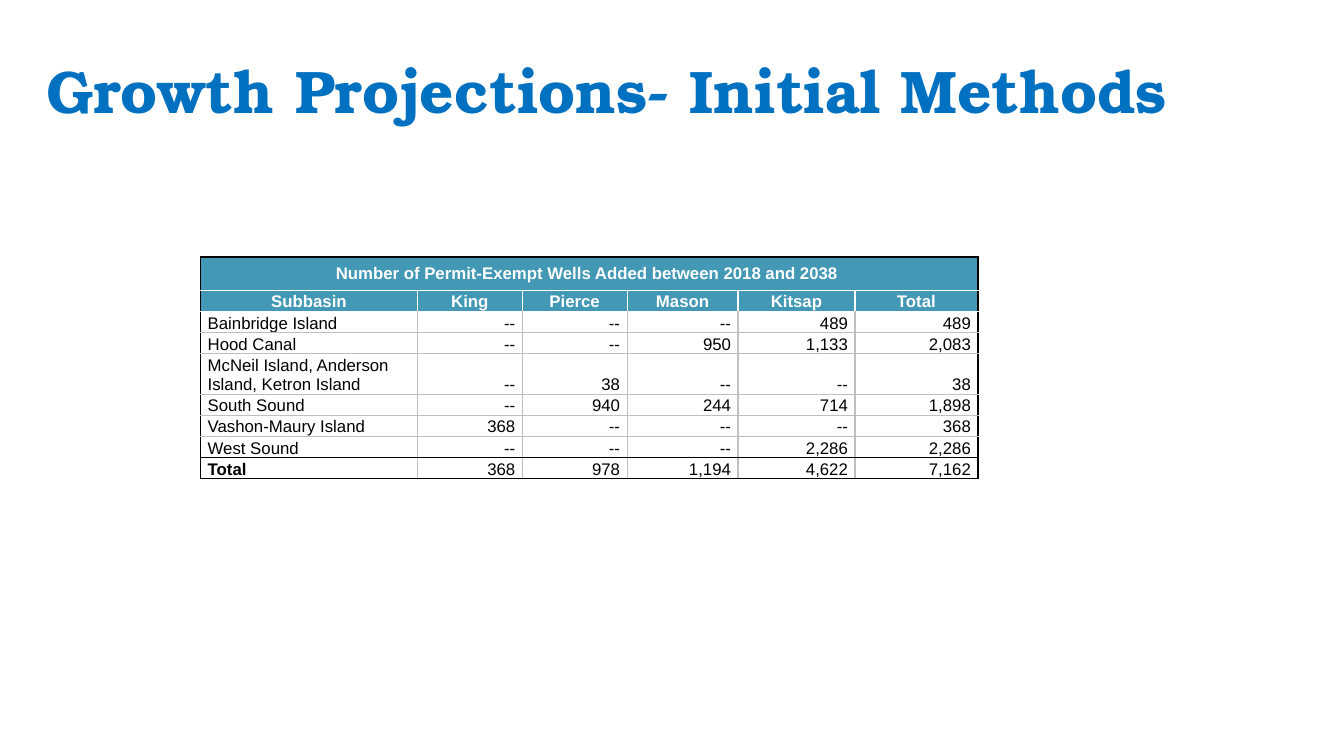
"""Build the slide on projected permit-exempt wells by subbasin and county."""
import lxml.etree
import pptx
import pptx.dml.color
import pptx.enum.text
import pptx.oxml.ns
import pptx.util

Inches = pptx.util.Inches
Align = pptx.enum.text.PP_ALIGN
Anchor = pptx.enum.text.MSO_ANCHOR

COUNTIES = ["King", "Pierce", "Mason", "Kitsap"]
WELLS = {
    "Bainbridge Island": [0, 0, 0, 489],
    "Hood Canal": [0, 0, 950, 1133],
    "McNeil Island, Anderson Island, Ketron Island": [0, 38, 0, 0],
    "South Sound": [0, 940, 244, 714],
    "Vashon-Maury Island": [368, 0, 0, 0],
    "West Sound": [0, 0, 0, 2286],
}
COLUMN_WIDTHS = [2.15, 1.04, 1.04, 1.1, 1.16, 1.22]
ROW_HEIGHTS = [0.33, 0.21, 0.21, 0.21, 0.37, 0.21, 0.21, 0.21, 0.21]


def color(value):
    return pptx.dml.color.RGBColor.from_string(value)


def write(frame, text, size=12, font="Arial", ink="000000", bold=False,
          align=Align.LEFT, spacing=0):
    paragraph = frame.paragraphs[0]
    paragraph.alignment = align
    paragraph.space_before = paragraph.space_after = pptx.util.Pt(spacing)
    run = paragraph.add_run()
    run.text = text
    run.font.size = pptx.util.Pt(size)
    run.font.name = font
    run.font.bold = bold
    run.font.color.rgb = color(ink)


def count(number):
    return f"{number:,}" if number else "--"


def well_rows():
    rows = [["Subbasin", *COUNTIES, "Total"]]
    for subbasin, wells in WELLS.items():
        rows.append([subbasin, *map(count, [*wells, sum(wells)])])
    totals = [sum(county) for county in zip(*WELLS.values())]
    rows.append(["Total", *map(count, [*totals, sum(totals)])])
    return rows


class WellSlide:
    black, white, grey = "000000", "FFFFFF", "BFBFBF"
    title_blue, header_teal = "0070C0", "4298B5"

    def __init__(self, slide):
        self.slide = slide

    def title(self, text, left, top, width, height):
        box = self.slide.shapes.add_textbox(
            Inches(left), Inches(top), Inches(width), Inches(height))
        frame = box.text_frame
        frame.word_wrap = True
        frame.vertical_anchor = Anchor.MIDDLE
        frame.margin_left = frame.margin_right = 0
        write(frame, text, size=42.9, font="TeX Gyre Bonum",
              ink=self.title_blue, bold=True, align=Align.CENTER)

    def horizontal_rule(self, position):
        if position in (1, 2):
            return self.white
        last = len(ROW_HEIGHTS)
        return self.black if position in (0, last - 1, last) else self.grey

    def vertical_rule(self, row, position):
        if row == 0 or position in (0, len(COLUMN_WIDTHS)):
            return self.black
        return self.white if row == 1 else self.grey

    def borders(self, cell, row, column):
        properties = cell._tc.get_or_add_tcPr()
        rules = {
            "a:lnL": self.vertical_rule(row, column),
            "a:lnR": self.vertical_rule(row, column + 1),
            "a:lnT": self.horizontal_rule(row),
            "a:lnB": self.horizontal_rule(row + 1),
        }
        qn = pptx.oxml.ns.qn
        for tag, ink in rules.items():
            line = lxml.etree.SubElement(
                properties, qn(tag), w=str(pptx.util.Pt(1)))
            fill = lxml.etree.SubElement(line, qn("a:solidFill"))
            lxml.etree.SubElement(fill, qn("a:srgbClr"), val=ink)

    def style_cell(self, cell, row, column):
        self.borders(cell, row, column)
        cell.margin_left = cell.margin_right = Inches(0.07)
        cell.margin_top = cell.margin_bottom = 0
        cell.vertical_anchor = Anchor.BOTTOM if row else Anchor.MIDDLE
        if row < 2:
            cell.fill.solid()
            cell.fill.fore_color.rgb = color(self.header_teal)
        else:
            cell.fill.background()

    def table(self, caption, rows, left, top):
        table = self.slide.shapes.add_table(
            len(ROW_HEIGHTS), len(COLUMN_WIDTHS), Inches(left), Inches(top),
            Inches(sum(COLUMN_WIDTHS)), Inches(sum(ROW_HEIGHTS))).table
        table.first_row = table.horz_banding = False
        for column, width in zip(table.columns, COLUMN_WIDTHS):
            column.width = Inches(width)
        for row, height in zip(table.rows, ROW_HEIGHTS):
            row.height = Inches(height)
        blank = [""] * (len(COLUMN_WIDTHS) - 1)
        for r, texts in enumerate([[caption, *blank], *rows]):
            for c, text in enumerate(texts):
                cell = table.cell(r, c)
                self.style_cell(cell, r, c)
                if not text:
                    continue
                header = r < 2
                align = Align.RIGHT if c else Align.LEFT
                write(cell.text_frame, text, spacing=3,
                      ink=self.white if header else self.black,
                      bold=header or text == "Total",
                      align=Align.CENTER if header else align)
        table.cell(0, 0).merge(table.cell(0, len(COLUMN_WIDTHS) - 1))


def main():
    deck = pptx.Presentation()
    deck.slide_width = Inches(13.33)
    deck.slide_height = Inches(7.5)
    growth = WellSlide(deck.slides.add_slide(deck.slide_layouts[6]))
    growth.title("Growth Projections- Initial Methods", 0.27, 0.16, 11.5, 1.45)
    growth.table("Number of Permit-Exempt Wells Added between 2018 and 2038 ",
                 well_rows(), 1.99, 2.55)
    deck.save("out.pptx")


if __name__ == "__main__":
    main()
